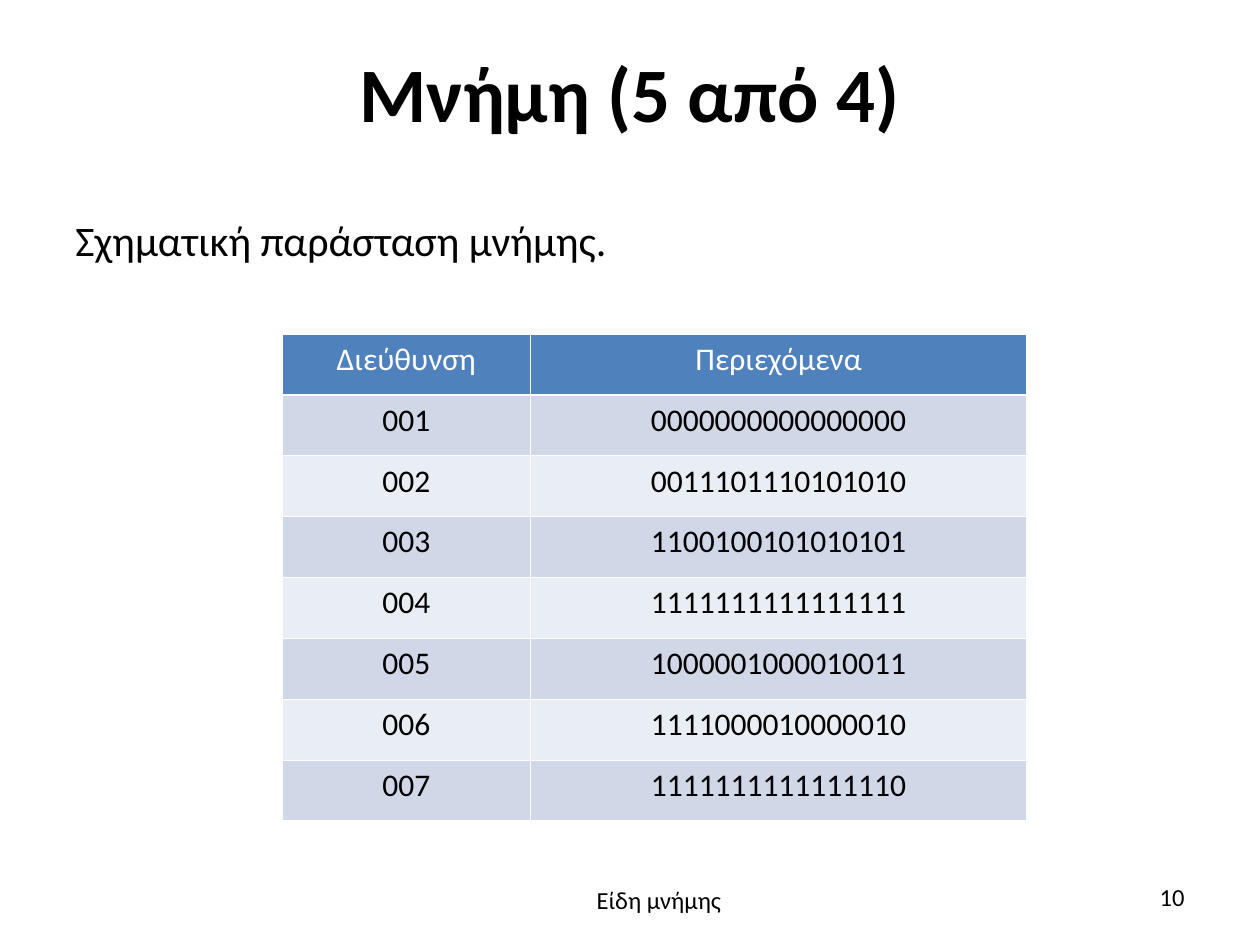
from pptx import Presentation
from pptx.dml.color import RGBColor
from pptx.enum import text
from pptx.util import Inches, Pt

COLORS = {"ink": "000000", "white": "FFFFFF", "head": "4F81BD",
          "odd": "D0D8E8", "even": "E9EDF4"}
FONT = "Calibri"
AL = text.PP_ALIGN

prs = Presentation()
prs.slide_width, prs.slide_height = Inches(10), Inches(7.5)
W, H = prs.slide_width, prs.slide_height
s = prs.slides.add_slide(prs.slide_layouts[6])


def write(tf, words, size, align, color="ink", bold=False):
    p = tf.paragraphs[0]
    p.alignment = align
    r = p.add_run()
    r.text = words
    r.font.name, r.font.size, r.font.bold = FONT, Pt(size), bold
    r.font.color.rgb = RGBColor.from_string(COLORS[color])
    return p


def add_text(x, y, w, h, words, size, align, bold=False):
    """Place a text box by shares of the slide's width and height."""
    sp = s.shapes.add_textbox(int(W * x), int(H * y), int(W * w), int(H * h))
    tf = sp.text_frame
    tf.word_wrap = True
    return tf, write(tf, words, size, align, bold=bold)


# Title
tf, p = add_text(0, 0.01, 1, 0.18, "Μνήμη (5 από 4)", 44, AL.CENTER, bold=True)
tf.vertical_anchor = text.MSO_ANCHOR.MIDDLE
tf.margin_left = tf.margin_right = tf.margin_bottom = 0
tf.margin_top = Inches(0.02)
p.line_spacing = 0.98

# Lead sentence
add_text(0.05, 0.22, 0.9, 0.07, "Σχηματική παράσταση μνήμης.", 24, AL.LEFT)

# Memory table: the contents column is twice as wide as the address column
contents = ["0000000000000000", "0011101110101010", "1100100101010101",
            "1111111111111111", "1000001000010011", "1111000010000010",
            "1111111111111110"]
rows = [("Διεύθυνση", "Περιεχόμενα")]
rows += [(f"{i:03d}", word) for i, word in enumerate(contents, 1)]
col, row = Inches(1.97), Inches(3.87) // len(rows)
tbl = s.shapes.add_table(len(rows), 2, Inches(2.24), Inches(2.65),
                         col * 3, row * len(rows)).table
tbl.columns[0].width, tbl.columns[1].width = col, col * 2
for i, values in enumerate(rows):
    fill = "head" if i == 0 else "odd" if i % 2 else "even"
    for j, value in enumerate(values):
        cell = tbl.cell(i, j)
        cell.fill.solid()
        cell.fill.fore_color.rgb = RGBColor.from_string(COLORS[fill])
        write(cell.text_frame, value, 18, AL.CENTER, "ink" if i else "white")

# Footer and slide number
add_text(0.348, 0.93, 0.35, 0.07, "Είδη μνήμης", 14, AL.CENTER)
add_text(0.717, 0.927, 0.233, 0.053, "10", 14, AL.RIGHT)

prs.save("out.pptx")
